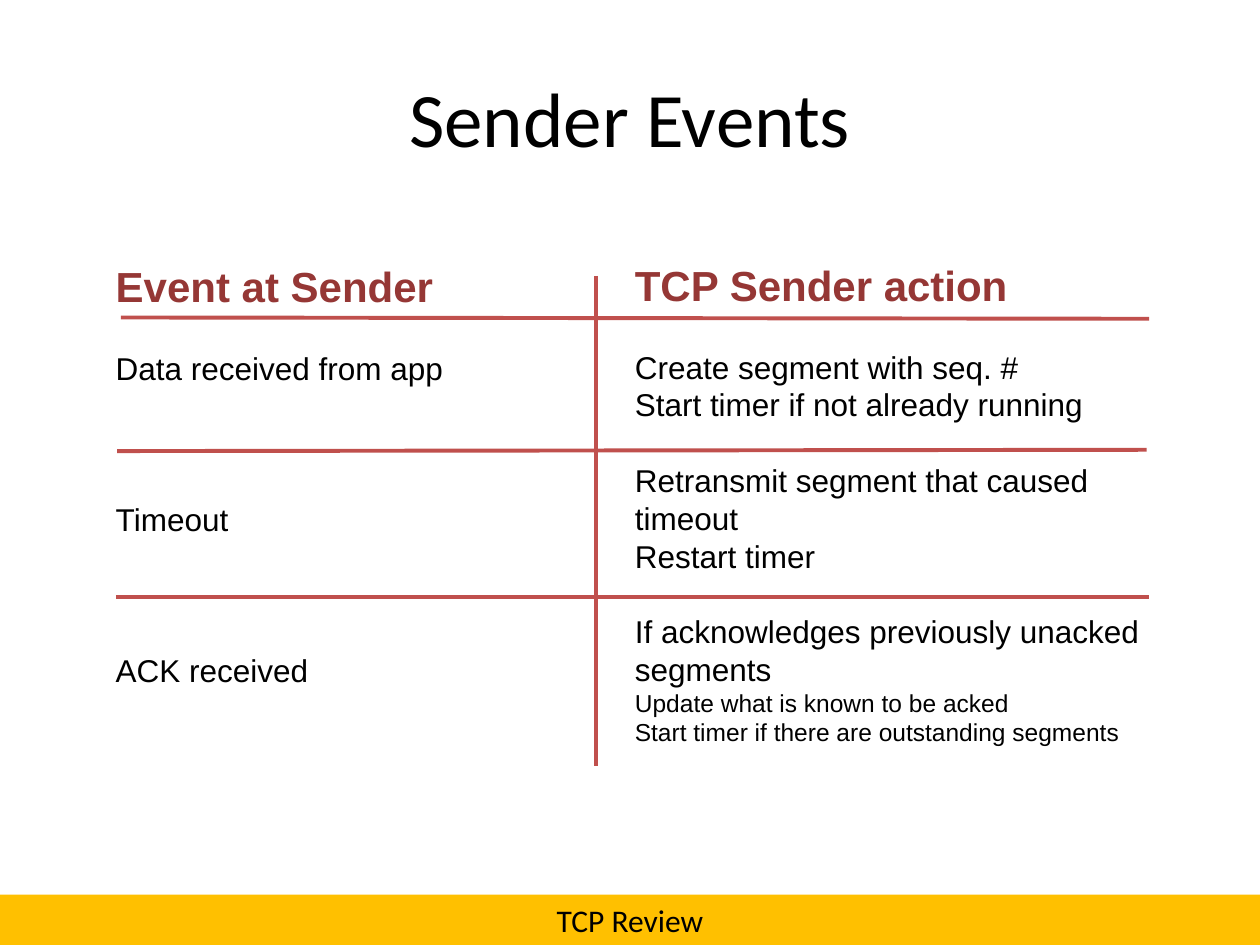
from lxml.etree import SubElement
from pptx import Presentation
from pptx.dml.color import RGBColor
from pptx.enum.shapes import MSO_CONNECTOR, MSO_SHAPE
from pptx.enum.text import MSO_ANCHOR, PP_ALIGN
from pptx.oxml.ns import qn
from pptx.util import Inches, Pt

COLORS = {"text": "000000", "heading": "953735", "rule": "C0504D", "footer": "FFC000"}
STYLES = {
    "title": {"name": "Calibri", "size": Pt(44)},
    "footer": {"name": "Calibri", "size": Pt(18)},
    "heading": {"name": "Arial", "size": Pt(24), "bold": True},
    "body": {"name": "Arial", "size": Pt(18)},
    "detail": {"name": "Arial", "size": Pt(14)},
}
LINE_SPACING = 1.2
BODY_LINE = 18 * LINE_SPACING

# Each column: box, wrap, and entries of (text, style, body lines of space above)
COLUMNS = [
    ((0.82, 2.02, 2.82, 3.7), False, [
        ("Event at Sender", "heading", 0),
        ("Data received from app", "body", 1),
        ("Timeout", "body", 3),
        ("ACK received", "body", 3),
    ]),
    ((4.94, 2.01, 4.48, 4.01), True, [
        ("TCP Sender action", "heading", 0),
        ("Create segment with seq. #", "body", 1),
        ("Start timer if not already running", "body", 0),
        ("Retransmit segment that caused timeout", "body", 1),
        ("Restart timer", "body", 0),
        ("If acknowledges previously unacked segments", "body", 1),
        ("Update what is known to be acked", "detail", 0),
        ("Start timer if there are outstanding segments", "detail", 0),
    ]),
]
RULES = [
    (0.96, 2.52, 9.12, 2.53),
    (0.93, 3.58, 9.1, 3.57),
    (0.92, 4.74, 9.12, 4.74),
    (4.73, 2.19, 4.73, 6.08),
]


def inches(values):
    return [Inches(value) for value in values]


def write(paragraph, text, style):
    run = paragraph.add_run()
    run.text = text
    for attribute, value in STYLES[style].items():
        setattr(run.font, attribute, value)
    color = COLORS["heading" if style == "heading" else "text"]
    run.font.color.rgb = RGBColor.from_string(color)


def write_centered(shape, text, style):
    frame = shape.text_frame
    frame.word_wrap = True
    frame.vertical_anchor = MSO_ANCHOR.MIDDLE
    frame.paragraphs[0].alignment = PP_ALIGN.CENTER
    write(frame.paragraphs[0], text, style)


def add_column(slide, box, wrap, entries):
    frame = slide.shapes.add_textbox(*inches(box)).text_frame
    frame.word_wrap = wrap
    for index, (text, style, gap) in enumerate(entries):
        paragraph = frame.add_paragraph() if index else frame.paragraphs[0]
        paragraph.line_spacing = Pt(STYLES[style]["size"].pt * LINE_SPACING)
        paragraph.space_before = Pt(gap * BODY_LINE)
        write(paragraph, text, style)


def add_rule(slide, ends):
    rule = slide.shapes.add_connector(MSO_CONNECTOR.STRAIGHT, *inches(ends))
    rule.line.color.rgb = RGBColor.from_string(COLORS["rule"])
    rule.line.width = Pt(2.25)
    SubElement(rule._element.spPr, qn("a:effectLst"))


def main():
    presentation = Presentation()
    presentation.slide_width, presentation.slide_height = inches((10, 7.5))
    slide = presentation.slides.add_slide(presentation.slide_layouts[6])

    title = slide.shapes.add_textbox(*inches((0.5, 0.3, 9, 1.25)))
    write_centered(title, "Sender Events", "title")
    for column in COLUMNS:
        add_column(slide, *column)
    for ends in RULES:
        add_rule(slide, ends)

    footer = slide.shapes.add_shape(MSO_SHAPE.RECTANGLE, *inches((0, 7.1, 10, 0.4)))
    footer.shadow.inherit = False
    footer.fill.solid()
    footer.fill.fore_color.rgb = RGBColor.from_string(COLORS["footer"])
    footer.line.fill.background()
    write_centered(footer, "TCP Review", "footer")

    presentation.save("out.pptx")


if __name__ == "__main__":
    main()
